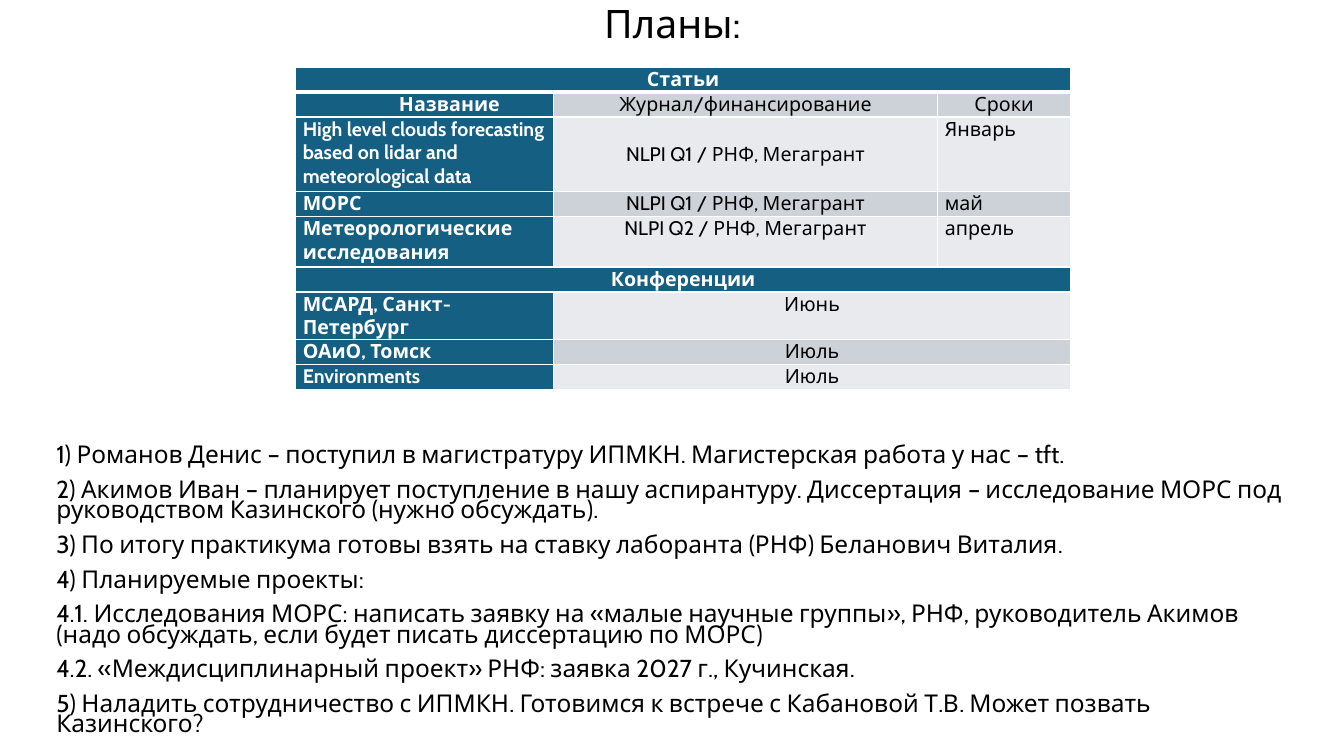
from dataclasses import dataclass

from lxml import etree
from pptx import Presentation
from pptx.dml.color import RGBColor
from pptx.enum.text import MSO_ANCHOR, PP_ALIGN
from pptx.oxml.ns import qn
from pptx.util import Cm, Pt

LEFT, CENTER = PP_ALIGN.LEFT, PP_ALIGN.CENTER
TOP, MIDDLE = MSO_ANCHOR.TOP, MSO_ANCHOR.MIDDLE

COLUMN_WIDTHS = [6.5, 9.68, 3.35]
ROW_HEIGHTS = [0.63, 0.63, 1.88, 0.63, 1.27, 0.63, 0.63, 0.63, 0.63]
HEADER_ROW, FIRST_ARTICLE_ROW = 1, 2
PLANS = [
    ["Статьи"],
    ["Название", "Журнал/финансирование", "Сроки"],
    ["High level clouds forecasting based on lidar and meteorological data",
     "NLPI Q1 / РНФ, Мегагрант", "Январь"],
    ["МОРС", "NLPI Q1 / РНФ, Мегагрант", "май"],
    ["Метеорологические исследования", "NLPI Q2 / РНФ, Мегагрант", "апрель"],
    ["Конференции"],
    ["МСАРД, Санкт-Петербург", "Июнь"],
    ["ОАиО, Томск", "Июль"],
    ["Environments", "Июль"],
]
TASKS = [
    "1) Романов Денис – поступил в магистратуру ИПМКН. Магистерская работа у нас – tft.",
    "2) Акимов Иван – планирует поступление в нашу аспирантуру. Диссертация – исследование "
    "МОРС под руководством Казинского (нужно обсуждать).",
    "3) По итогу практикума готовы взять на ставку лаборанта (РНФ) Беланович Виталия.",
    "4) Планируемые проекты:",
    "4.1. Исследования МОРС: написать заявку на «малые научные группы», РНФ, руководитель "
    "Акимов (надо обсуждать, если будет писать диссертацию по МОРС)",
    "4.2. «Междисциплинарный проект» РНФ: заявка 2027 г., Кучинская.",
    "5) Наладить сотрудничество с ИПМКН. Готовимся к встрече с Кабановой Т.В. "
    "Может позвать Казинского?",
]


@dataclass(frozen=True)
class Theme:
    """Colours, font and type sizes of the slide."""
    font: str = "Cabin"
    text: str = "000000"
    white: str = "FFFFFF"
    accent: str = "156082"
    bands: tuple = ("E8EAED", "CCD2D8")
    title_size: float = 28
    body_size: float = 17.5
    table_size: float = 14


def apply_format(target, values):
    """Set every attribute named in a dict of format values."""
    for name, value in values.items():
        setattr(target, name, value)


class PlanSlide:
    """Draws text and tables on one slide in a given theme."""

    def __init__(self, presentation, theme):
        self.theme = theme
        self.slide = presentation.slides.add_slide(presentation.slide_layouts[6])

    def style_paragraph(self, paragraph, size, color, bold=False, **layout):
        """Format a paragraph and its font."""
        apply_format(paragraph, layout)
        apply_format(paragraph.font, {"name": self.theme.font, "size": Pt(size), "bold": bold})
        paragraph.font.color.rgb = RGBColor.from_string(color)

    def text(self, lines, left, top, width, height, size, **layout):
        """Add a text box with one paragraph per line."""
        box = self.slide.shapes.add_textbox(Cm(left), Cm(top), Cm(width), Cm(height))
        frame = box.text_frame
        frame.word_wrap = True
        frame.text = "\n".join(lines)
        for index, paragraph in enumerate(frame.paragraphs):
            self.style_paragraph(paragraph, size, self.theme.text,
                                 space_before=Pt(10 if index else 0), **layout)

    def borders(self, cell, bottom_width):
        """Outline a table cell in white."""
        properties = cell._tc.get_or_add_tcPr()
        for index, side in enumerate("LRTB"):
            width = Pt(bottom_width if side == "B" else 1)
            line = etree.Element(qn(f"a:ln{side}"), w=str(width))
            fill = etree.SubElement(line, qn("a:solidFill"))
            etree.SubElement(fill, qn("a:srgbClr"), val=self.theme.white)
            properties.insert(index, line)

    def cell(self, cell, row, column):
        """Format a table cell by its place in the plan."""
        section = len(PLANS[row]) == 1
        leading = section or column == 0
        dated = column == 2 and row >= FIRST_ARTICLE_ROW
        centered = section or row == HEADER_ROW or not (leading or dated)
        middle = column == 1 and row == FIRST_ARTICLE_ROW
        fill = self.theme.accent if leading else self.theme.bands[row % 2]
        apply_format(cell, {
            "margin_left": Cm(0.18), "margin_right": Cm(0.18),
            "margin_top": 0, "margin_bottom": 0,
            "vertical_anchor": MIDDLE if middle else TOP,
        })
        self.borders(cell, 1 if row else 3)
        cell.fill.solid()
        cell.fill.fore_color.rgb = RGBColor.from_string(fill)
        paragraph = cell.text_frame.paragraphs[0]
        self.style_paragraph(paragraph, self.theme.table_size,
                             self.theme.white if leading else self.theme.text,
                             bold=leading, alignment=CENTER if centered else LEFT)
        if row == HEADER_ROW and column == 0:
            paragraph._p.get_or_add_pPr().set("indent", str(Cm(1.25)))

    def table(self, rows, left, top):
        """Add the plan table, widening the last entry of each short row."""
        count = len(COLUMN_WIDTHS)
        frame = self.slide.shapes.add_table(len(rows), count, Cm(left), Cm(top),
                                            Cm(sum(COLUMN_WIDTHS)), Cm(sum(ROW_HEIGHTS)))
        table = frame.table
        apply_format(table, {"first_row": False, "horz_banding": False})
        for column, width in zip(table.columns, COLUMN_WIDTHS):
            column.width = Cm(width)
        for row, entries in enumerate(rows):
            table.rows[row].height = Cm(ROW_HEIGHTS[row])
            for column, entry in enumerate(entries):
                table.cell(row, column).text = entry
            for column in range(count):
                self.cell(table.cell(row, column), row, column)
            if len(entries) < count:
                table.cell(row, len(entries) - 1).merge(table.cell(row, count - 1))


def main():
    """Build the plans slide."""
    theme = Theme()
    presentation = Presentation()
    apply_format(presentation, {"slide_width": Cm(33.87), "slide_height": Cm(19.05)})
    plans = PlanSlide(presentation, theme)
    plans.table(PLANS, 7.45, 1.69)
    plans.text(TASKS, 1.17, 11.15, 31.55, 7.22, theme.body_size, line_spacing=0.7)
    plans.text(["Планы:"], 1.17, 0, 31.55, 1.5, theme.title_size,
               line_spacing=0.9, alignment=CENTER)
    presentation.save("out.pptx")


if __name__ == "__main__":
    main()
